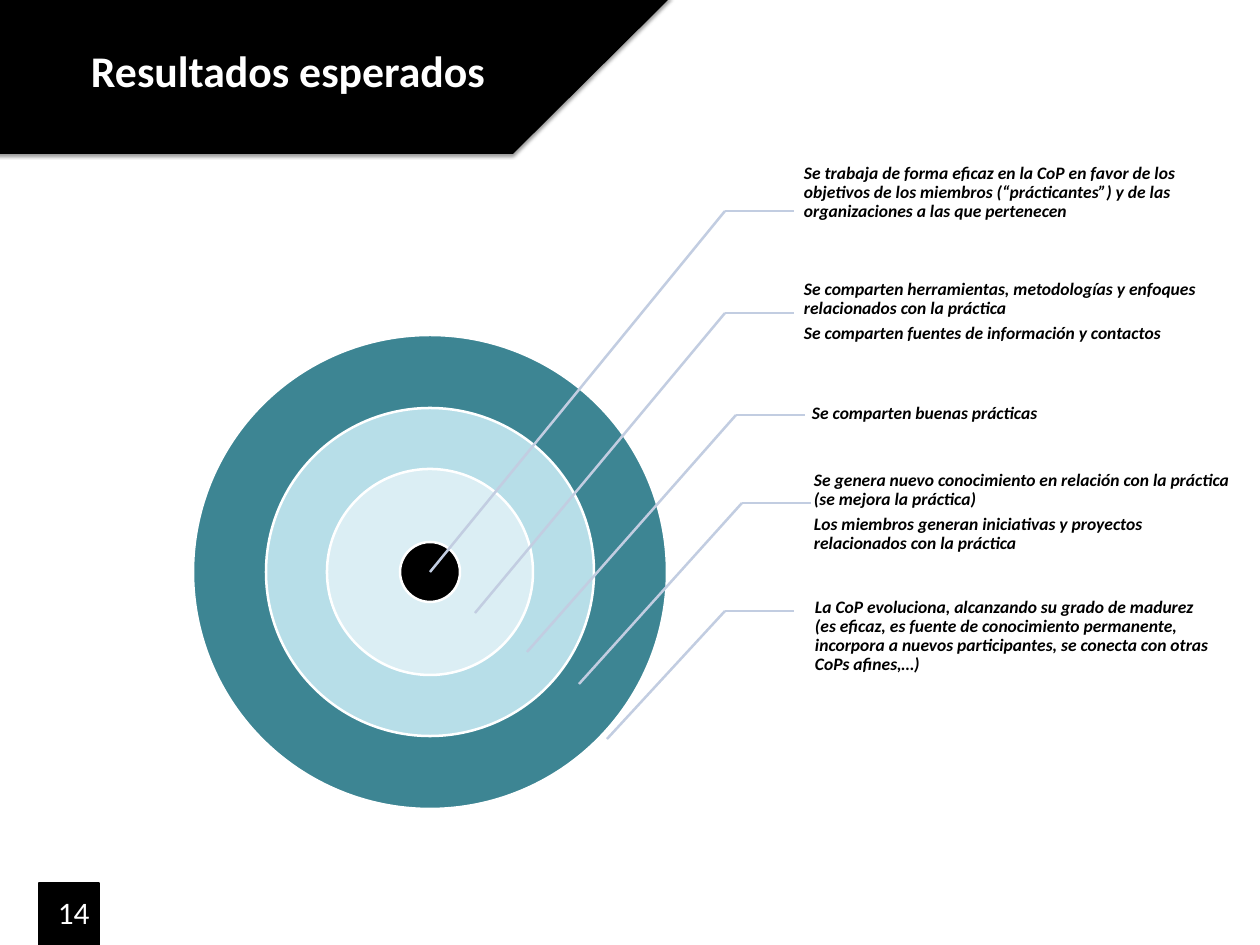
from dataclasses import dataclass

from lxml.etree import SubElement
from pptx import Presentation
from pptx.dml.color import RGBColor
from pptx.enum.shapes import MSO_CONNECTOR as Connector, MSO_SHAPE as Shape
from pptx.enum.text import MSO_ANCHOR as Anchor, MSO_AUTO_SIZE as AutoSize, PP_ALIGN as Align
from pptx.oxml.ns import qn
from pptx.util import Pt


@dataclass(frozen=True)
class Theme:
    font: str = "Calibri"
    black: str = "000000"
    white: str = "FFFFFF"
    teal: str = "3D8593"
    aqua: str = "B7DEE8"
    ice: str = "DBEEF4"
    leader: str = "C2CDE1"
    title_size: int = 35
    number_size: int = 25
    body_size: int = 14
    stroke: int = 2


THEME = Theme()
EMU_PER_PX = 10160
TARGET_X, TARGET_Y = 430, 572
LEADER_LENGTH = 69

RINGS = [
    (237, THEME.teal),
    (164, THEME.aqua),
    (103, THEME.ice),
    (30, THEME.black),
]

RESULTS = [
    ((725, 211), (430, 572), (794, 120, 446, 145), [
        "Se trabaja de forma eficaz en la CoP en favor de los objetivos de los miembros "
        "(“prácticantes”) y de las organizaciones a las que pertenecen",
    ]),
    ((725, 313), (475, 613), (794, 264, 446, 95), [
        "Se comparten herramientas, metodologías y enfoques relacionados con la práctica",
        "Se comparten fuentes de información y contactos",
    ]),
    ((736, 415), (527, 652), (802, 386, 273, 55), [
        "Se comparten buenas prácticas",
    ]),
    ((742, 503), (579, 684), (804, 437, 430, 150), [
        "Se genera nuevo conocimiento en relación con la práctica (se mejora la práctica)",
        "Los miembros generan iniciativas y proyectos relacionados con la práctica",
    ]),
    ((725, 611), (607, 739), (805, 569, 408, 135), [
        "La CoP evoluciona, alcanzando su grado de madurez (es eficaz, es fuente de "
        "conocimiento permanente, incorpora a nuevos participantes, se conecta con otras "
        "CoPs afines,…)",
    ]),
]


def px(*lengths):
    return [length * EMU_PER_PX for length in lengths]


def color(code):
    return RGBColor.from_string(code)


def write(frame, paragraphs, *, size, ink=THEME.black, bold=False, italic=False,
          anchor=Anchor.TOP, insets=(9, 5, 9, 5), spacing=1.0, after=0):
    frame.word_wrap = True
    frame.auto_size = AutoSize.NONE
    frame.vertical_anchor = anchor
    (frame.margin_left, frame.margin_top,
     frame.margin_right, frame.margin_bottom) = px(*insets)
    for index, wording in enumerate(paragraphs):
        paragraph = frame.add_paragraph() if index else frame.paragraphs[0]
        paragraph.alignment = Align.LEFT
        paragraph.line_spacing = spacing
        paragraph.space_after = Pt(after)
        run = paragraph.add_run()
        run.text = wording
        run.font.name = THEME.font
        run.font.size = Pt(size)
        run.font.bold = bold
        run.font.italic = italic
        run.font.color.rgb = color(ink)


def add_solid(slide, preset, box, fill, outline=None):
    solid = slide.shapes.add_shape(preset, *px(*box))
    solid.shadow.inherit = False
    solid.fill.solid()
    solid.fill.fore_color.rgb = color(fill)
    if outline:
        solid.line.color.rgb = color(outline)
        solid.line.width = Pt(THEME.stroke)
    else:
        solid.line.fill.background()
    return solid


def add_leader(slide, start, end):
    leader = slide.shapes.add_connector(Connector.STRAIGHT, *px(*start, *end))
    leader.line.color.rgb = color(THEME.leader)
    leader.line.width = Pt(THEME.stroke)
    SubElement(leader.element.spPr, qn("a:effectLst"))


def add_target(slide):
    for radius, fill in RINGS:
        box = (TARGET_X - radius, TARGET_Y - radius, 2 * radius, 2 * radius)
        add_solid(slide, Shape.OVAL, box, fill, THEME.white)


def add_result(slide, elbow, tip, box, paragraphs):
    label = slide.shapes.add_textbox(*px(*box))
    write(label.text_frame, paragraphs, size=THEME.body_size, bold=True, italic=True,
          anchor=Anchor.MIDDLE, insets=(10, 2, 2, 2), spacing=0.9, after=5)
    add_leader(slide, elbow, (elbow[0] + LEADER_LENGTH, elbow[1]))
    add_leader(slide, elbow, tip)


def add_banner(slide):
    banner = add_solid(slide, Shape.PARALLELOGRAM, (-162, -4, 834, 158), THEME.black)
    banner.adjustments[0] = 1.007
    effects = banner.element.spPr.find(qn("a:effectLst"))
    shadow = SubElement(effects, qn("a:outerShdw"), blurRad=str(Pt(3.1)),
                        dist=str(Pt(1.6)), dir="5400000", rotWithShape="0")
    tint = SubElement(shadow, qn("a:srgbClr"), val=THEME.black)
    SubElement(tint, qn("a:alpha"), val="38000")


def place_title(slide, wording):
    title = slide.shapes.title
    title.left, title.top, title.width, title.height = px(82, 39, 468, 62)
    write(title.text_frame, [wording], size=THEME.title_size, ink=THEME.white, bold=True)
    slide.shapes.element.append(title.element)


def add_page_number(slide, number):
    add_solid(slide, Shape.RECTANGLE, (39, 883, 60, 62), THEME.black, THEME.black)
    label = slide.shapes.add_textbox(*px(49, 888, 294, 50))
    write(label.text_frame, [number], size=THEME.number_size, ink=THEME.white)


def main():
    deck = Presentation()
    deck.slide_width, deck.slide_height = px(1260, 945)
    slide = deck.slides.add_slide(deck.slide_layouts[5])
    add_target(slide)
    for result in RESULTS:
        add_result(slide, *result)
    add_banner(slide)
    place_title(slide, "Resultados esperados")
    add_page_number(slide, "14")
    deck.save("out.pptx")


if __name__ == "__main__":
    main()
